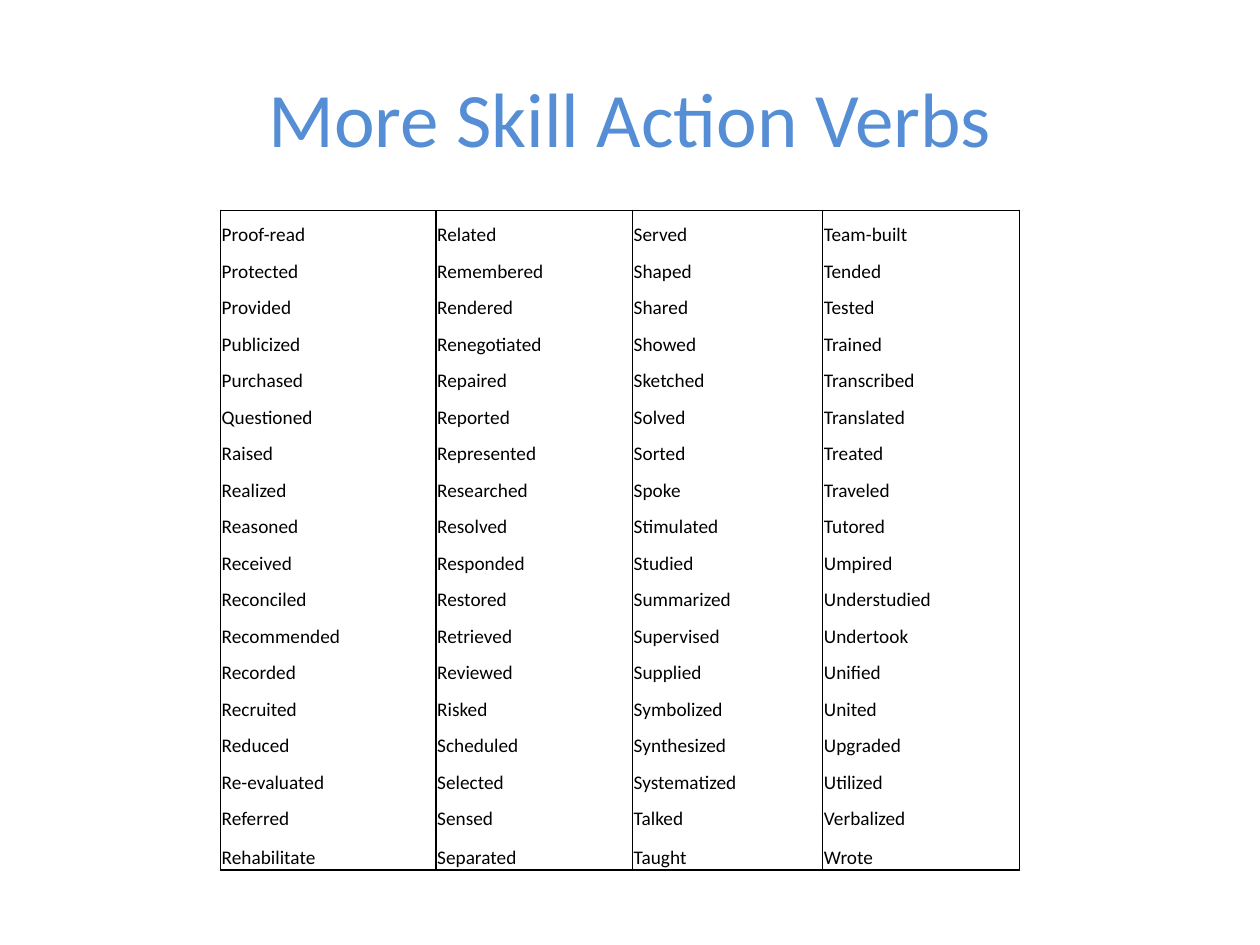
from lxml import etree
from pptx import Presentation
from pptx.dml.color import RGBColor
from pptx.enum.text import MSO_ANCHOR, PP_ALIGN
from pptx.oxml.ns import qn
from pptx.util import Inches, Pt

CENTER = PP_ALIGN.CENTER
MIDDLE = MSO_ANCHOR.MIDDLE
BOTTOM = MSO_ANCHOR.BOTTOM
TITLE_ONLY = 5

COLORS = {"title": "558ED5", "text": "000000", "border": "000000"}

# One list per table column
VERBS = [
    ["Proof-read", "Protected", "Provided", "Publicized", "Purchased",
     "Questioned", "Raised", "Realized", "Reasoned", "Received", "Reconciled",
     "Recommended", "Recorded", "Recruited", "Reduced", "Re-evaluated",
     "Referred", "Rehabilitate"],
    ["Related", "Remembered", "Rendered", "Renegotiated", "Repaired",
     "Reported", "Represented", "Researched", "Resolved", "Responded",
     "Restored", "Retrieved", "Reviewed", "Risked", "Scheduled", "Selected",
     "Sensed", "Separated"],
    ["Served", "Shaped", "Shared", "Showed", "Sketched", "Solved", "Sorted",
     "Spoke", "Stimulated", "Studied", "Summarized", "Supervised", "Supplied",
     "Symbolized", "Synthesized", "Systematized", "Talked", "Taught"],
    ["Team-built", "Tended", "Tested", "Trained", "Transcribed", "Translated",
     "Treated", "Traveled", "Tutored", "Umpired", "Understudied", "Undertook",
     "Unified", "United", "Upgraded", "Utilized", "Verbalized", "Wrote"],
]
COL_WIDTHS = [1.71, 1.56, 1.51, 1.56]
ROW_HEIGHT, LAST_ROW_HEIGHT = 0.29, 0.31


class SlideBuilder:
    font = "Calibri"
    border_width = Pt(1)

    def __init__(self, slide):
        self.s = slide

    def add_run(self, p, text, size, color):
        r = p.add_run()
        r.text = text
        r.font.name = self.font
        r.font.size = Pt(size)
        r.font.color.rgb = RGBColor.from_string(COLORS[color])

    def title(self, text, left, top, width, height):
        sp = self.s.shapes.title
        sp.left, sp.top = Inches(left), Inches(top)
        sp.width, sp.height = Inches(width), Inches(height)
        tf = sp.text_frame
        tf.vertical_anchor = MIDDLE
        p = tf.paragraphs[0]
        p.alignment = CENTER
        self.add_run(p, text, 44, "title")

    def borders(self, cell, visible):
        tc_pr = cell._tc.get_or_add_tcPr()
        for side in "LRTB":
            ln = etree.SubElement(tc_pr, qn(f"a:ln{side}"), w=str(self.border_width))
            if side in visible:
                fill = etree.SubElement(ln, qn("a:solidFill"))
                etree.SubElement(fill, qn("a:srgbClr"), val=COLORS["border"])
            else:
                etree.SubElement(ln, qn("a:noFill"))

    def cell(self, cell, text, visible):
        cell.margin_left = cell.margin_right = cell.margin_top = Inches(0.01)
        cell.margin_bottom = 0
        cell.vertical_anchor = BOTTOM
        self.borders(cell, visible)
        cell.fill.background()
        self.add_run(cell.text_frame.paragraphs[0], text, 11, "text")

    def table(self, columns, left, top):
        last = len(columns[0]) - 1
        heights = [ROW_HEIGHT] * last + [LAST_ROW_HEIGHT]
        table = self.s.shapes.add_table(
            len(heights), len(columns), Inches(left), Inches(top),
            Inches(sum(COL_WIDTHS)), Inches(sum(heights))).table
        table.first_row = table.horz_banding = False
        for column, width in zip(table.columns, COL_WIDTHS):
            column.width = Inches(width)
        for row, height in zip(table.rows, heights):
            row.height = Inches(height)
        # Vertical rules throughout, horizontal ones only on the outer edge
        for c, words in enumerate(columns):
            for r, word in enumerate(words):
                visible = "LR" + ("T" if r == 0 else "") + ("B" if r == last else "")
                self.cell(table.cell(r, c), word, visible)


def main():
    prs = Presentation()
    prs.slide_width, prs.slide_height = Inches(10), Inches(7.5)
    builder = SlideBuilder(prs.slides.add_slide(prs.slide_layouts[TITLE_ONLY]))

    # Title
    builder.title("More Skill Action Verbs", 0.5, 0.3, 9, 1.25)

    # Verb table
    builder.table(VERBS, 1.75, 1.67)

    prs.save("out.pptx")


if __name__ == "__main__":
    main()
